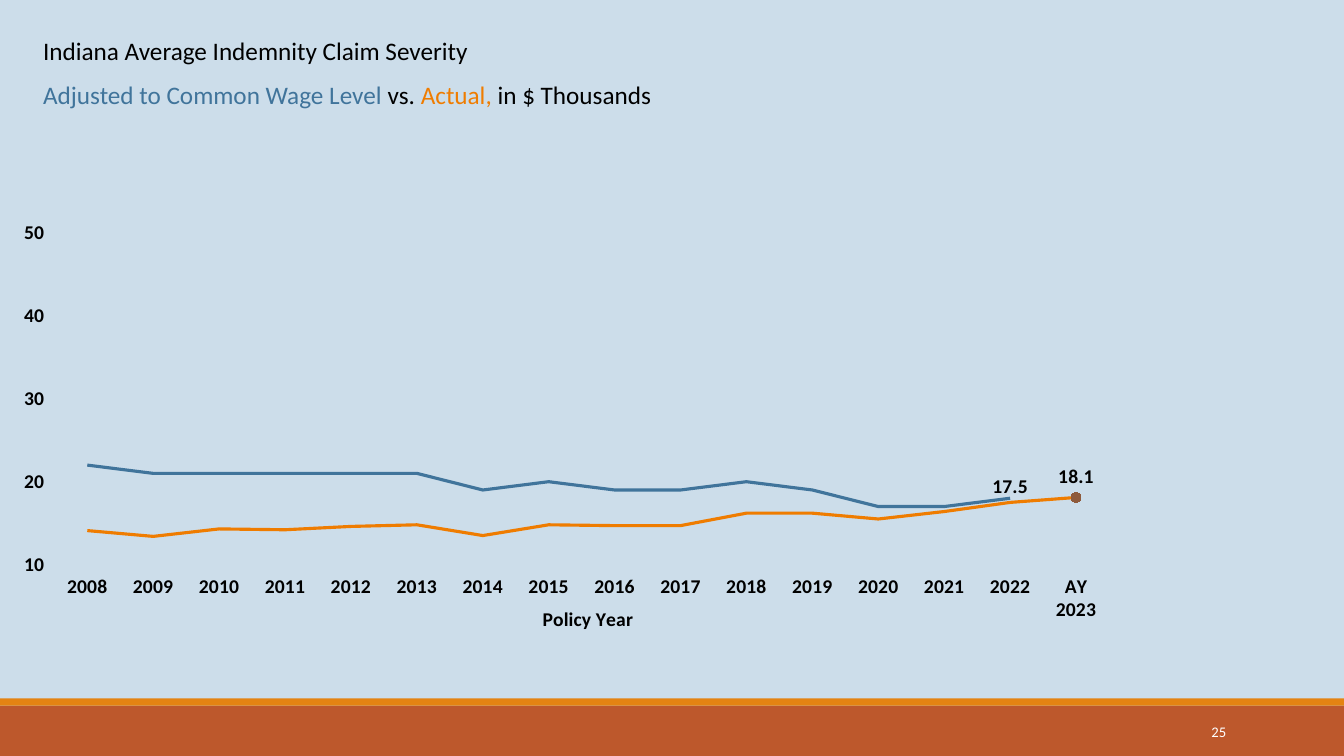
import pptx
import pptx.chart.data
import pptx.dml.color
import pptx.enum.chart
import pptx.enum.shapes
import pptx.enum.text
import pptx.oxml
import pptx.oxml.ns
import pptx.util

WIDTH, HEIGHT = 13.33, 7.5
FONT = "Calibri"
COLORS = {
    "background": "CCDDEA", "footer": "BD582C", "stripe": "E48312",
    "adjusted": "40749B", "actual": "EF7C00", "marker": "8E5A3C",
    "text": "000000", "number": "FFFFFF",
}
HEADING = [
    [("Indiana Average Indemnity Claim Severity", "text")],
    [("Adjusted to Common Wage Level ", "adjusted"), ("vs. ", "text"),
     ("Actual,", "actual"), (" in $ Thousands", "text")],
]
PAGE_NUMBER = [[("25", "number")]]
YEARS = [str(year) for year in range(2008, 2023)] + ["AY 2023"]
SEVERITY = {
    "adjusted": ("Adjusted to Common Wage Level",
                 [22, 21, 21, 21, 21, 21, 19, 20,
                  19, 19, 20, 19, 17, 17, 18, None]),
    "actual": ("Actual",
               [14.1, 13.4, 14.3, 14.2, 14.6, 14.8, 13.5, 14.8,
                14.7, 14.7, 16.2, 16.2, 15.5, 16.4, 17.5, 18.1]),
}
LABELLED_YEARS = ["2022", "AY 2023"]
BANDS = {"footer": (7, 0.5), "stripe": (6.93, 0.07)}
CHART_AREA = (0, 1.93, 11, 4.4)
PLOT_SHARES = {"x": 0.049, "y": 0.088, "w": 0.951, "h": 0.756}
TITLE_SHARES = {"x": 0.486, "y": 0.93}


def color(name):
    return pptx.dml.color.RGBColor.from_string(COLORS[name])


def inches(*lengths):
    return [pptx.util.Inches(length) for length in lengths]


def add_text(page, area, paragraphs, size):
    box = page.shapes.add_textbox(*inches(*area))
    frame = box.text_frame
    frame.word_wrap = True
    for index, spans in enumerate(paragraphs):
        para = frame.add_paragraph() if index else frame.paragraphs[0]
        for text, tint in spans:
            span = para.add_run()
            span.text = text
            span.font.name = FONT
            span.font.size = pptx.util.Pt(size)
            span.font.color.rgb = color(tint)
    return frame


def set_layout(parent, position, shares, inner=False):
    """Fix a chart part at shares of the chart's size."""
    for old in parent.findall(pptx.oxml.ns.qn("c:layout")):
        parent.remove(old)
    target = '<c:layoutTarget val="inner"/>' if inner else ""
    modes = "".join(f'<c:{side}Mode val="edge"/>' for side in "xy")
    values = "".join(f'<c:{side} val="{share}"/>' for side, share in shares.items())
    parent.insert(position, pptx.oxml.parse_xml(
        f'<c:layout {pptx.oxml.ns.nsdecls("c")}><c:manualLayout>'
        f"{target}{modes}{values}</c:manualLayout></c:layout>"))


def style_axes(chart):
    years, dollars = chart.category_axis, chart.value_axis
    for axis in (years, dollars):
        axis.has_major_gridlines = False
        axis.major_tick_mark = pptx.enum.chart.XL_TICK_MARK.OUTSIDE
        axis.format.line.fill.background()
    dollars.minimum_scale, dollars.maximum_scale = 10, 50
    dollars.major_unit = 10
    dollars.tick_labels.number_format = "#,##0"
    dollars.tick_labels.number_format_is_linked = False
    title = years.axis_title
    title.text_frame.text = "Policy Year"
    font = title.text_frame.paragraphs[0].runs[0].font
    font.name, font.size, font.bold = FONT, pptx.util.Pt(14), True
    font.color.rgb = color("text")
    set_layout(title._element, 1, TITLE_SHARES)


def add_severity_chart(page):
    data = pptx.chart.data.CategoryChartData(number_format="#,##0.0")
    data.categories = YEARS
    for name, values in SEVERITY.values():
        data.add_series(name, values)
    chart = page.shapes.add_chart(
        pptx.enum.chart.XL_CHART_TYPE.LINE, *inches(*CHART_AREA), data).chart
    chart.has_legend = chart.has_title = False
    chart.font.name, chart.font.size, chart.font.bold = FONT, pptx.util.Pt(14), True
    chart.font.color.rgb = color("text")
    style_axes(chart)
    plot = chart.plots[0]
    plot.vary_by_categories = False
    set_layout(chart._chartSpace.chart.plotArea, 0, PLOT_SHARES, inner=True)

    for series, tint in zip(plot.series, SEVERITY):
        series.smooth = False
        series.format.line.color.rgb = color(tint)
        series.format.line.width = pptx.util.Pt(2.25)
        series.marker.style = pptx.enum.chart.XL_MARKER_STYLE.NONE

    actual = plot.series[1]
    actual.data_labels.show_value = False
    for year in LABELLED_YEARS:
        label = actual.points[YEARS.index(year)].data_label
        label.position = pptx.enum.chart.XL_LABEL_POSITION.ABOVE
    latest = actual.points[len(YEARS) - 1]
    latest.format.line.color.rgb = color("marker")
    latest.format.line.width = pptx.util.Pt(2.25)
    latest.marker.style = pptx.enum.chart.XL_MARKER_STYLE.CIRCLE
    latest.marker.size = 7
    latest.marker.format.fill.solid()
    latest.marker.format.fill.fore_color.rgb = color("marker")
    latest.marker.format.line.color.rgb = color("marker")


def main():
    deck = pptx.Presentation()
    deck.slide_width, deck.slide_height = inches(WIDTH, HEIGHT)
    page = deck.slides.add_slide(deck.slide_layouts[6])
    page.background.fill.solid()
    page.background.fill.fore_color.rgb = color("background")

    for name, (top, height) in BANDS.items():
        band = page.shapes.add_shape(
            pptx.enum.shapes.MSO_SHAPE.RECTANGLE, *inches(0, top, WIDTH, height))
        band.shadow.inherit = False
        band.fill.solid()
        band.fill.fore_color.rgb = color(name)
        band.line.fill.background()

    number = add_text(page, (10.83, 7.06, 1.43, 0.4), PAGE_NUMBER, 10.5)
    number.vertical_anchor = pptx.enum.text.MSO_ANCHOR.MIDDLE
    number.paragraphs[0].alignment = pptx.enum.text.PP_ALIGN.RIGHT
    number.paragraphs[0].line_spacing = pptx.util.Pt(12.4)

    add_severity_chart(page)
    heading = add_text(page, (0.33, 0.3, 6.67, 0.84), HEADING, 18)
    heading.paragraphs[1].space_before = pptx.util.Pt(10)
    deck.save("out.pptx")


if __name__ == "__main__":
    main()
